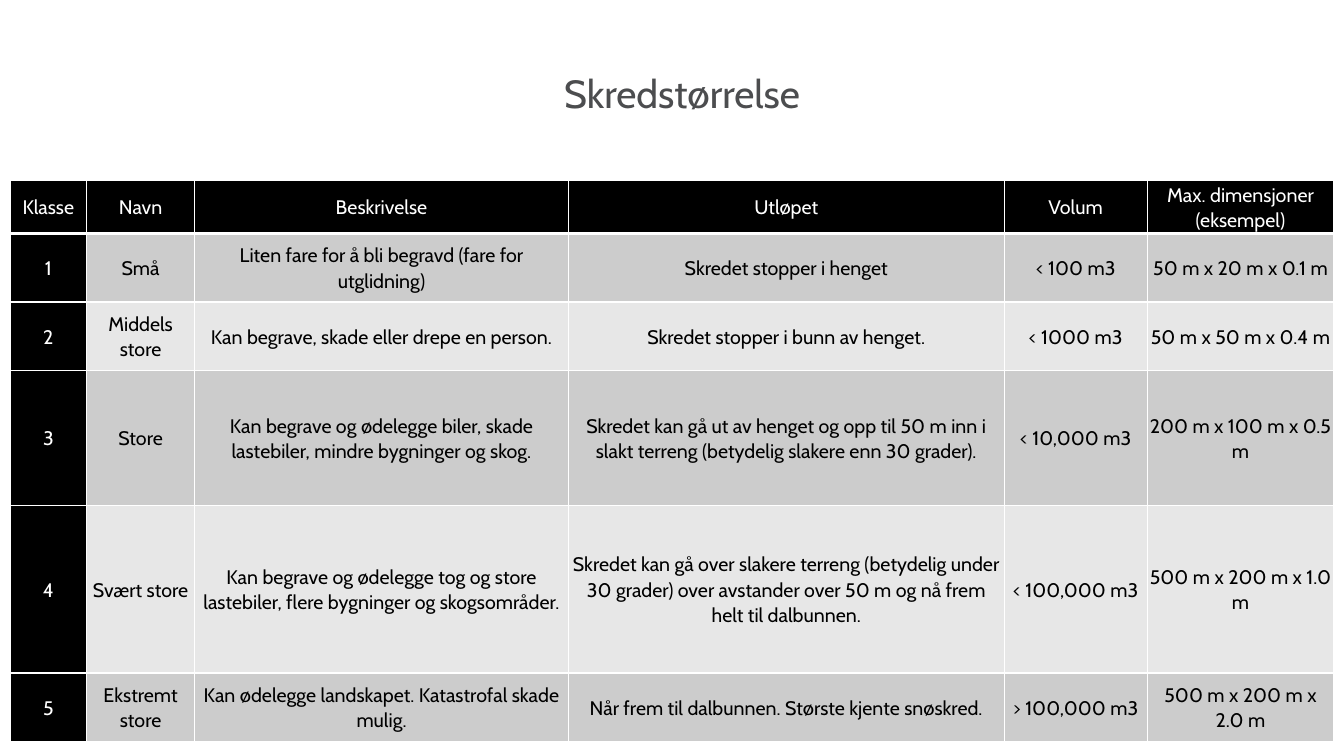
from dataclasses import astuple, dataclass

from lxml.etree import SubElement
from pptx import Presentation
from pptx.dml.color import RGBColor
from pptx.enum.text import MSO_ANCHOR as Anchor, PP_ALIGN as Align
from pptx.oxml.ns import qn
from pptx.slide import Slide
from pptx.table import _Cell as Cell
from pptx.text.text import TextFrame
from pptx.util import Inches, Pt

FONT = "Cabin"
COLORS = {
    "title": "4C4D4F",
    "header": "000000",
    "header_text": "FFFFFF",
    "odd_row": "CCCCCC",
    "even_row": "E7E7E7",
    "body_text": "000000",
    "border": "FFFFFF",
}
COL_WIDTHS = (0.76, 1.07, 3.71, 4.32, 1.42, 1.85)


@dataclass
class SizeClass:
    number: str
    name: str
    description: str
    runout: str
    volume: str
    dimensions: str
    height: float = 0.68


ROWS = [
    SizeClass("Klasse", "Navn", "Beskrivelse", "Utløpet", "Volum",
              "Max. dimensjoner (eksempel)", 0.35),
    SizeClass("1", "Små", "Liten fare for å bli begravd (fare for utglidning)",
              "Skredet stopper i henget", "< 100 m3", "50 m x 20 m x 0.1 m"),
    SizeClass("2", "Middels store", "Kan begrave, skade eller drepe en person.",
              "Skredet stopper i bunn av henget.", "< 1000 m3", "50 m x 50 m x 0.4 m"),
    SizeClass("3", "Store",
              "Kan begrave og ødelegge biler, skade lastebiler, mindre bygninger og skog.",
              "Skredet kan gå ut av henget og opp til 50 m inn i slakt terreng "
              "(betydelig slakere enn 30 grader).",
              "< 10,000 m3", "200 m x 100 m x 0.5 m", 1.34),
    SizeClass("4", "Svært store",
              "Kan begrave og ødelegge tog og store lastebiler, flere bygninger og skogsområder.",
              "Skredet kan gå over slakere terreng (betydelig under 30 grader) over "
              "avstander over 50 m og nå frem helt til dalbunnen.",
              "< 100,000 m3", "500 m x 200 m x 1.0 m", 1.66),
    SizeClass("5", "Ekstremt store", "Kan ødelegge landskapet. Katastrofal skade mulig.",
              "Når frem til dalbunnen. Største kjente snøskred.",
              "> 100,000 m3", "500 m x 200 m x 2.0 m"),
]


def set_text(tf: TextFrame, text: str, size: float, color: str) -> None:
    tf.text = text
    p = tf.paragraphs[0]
    p.alignment = Align.CENTER
    font = p.runs[0].font
    font.name, font.size, font.bold = FONT, Pt(size), False
    font.color.rgb = RGBColor.from_string(COLORS[color])


def set_borders(cell: Cell, bottom: float) -> None:
    tc_pr = cell._tc.get_or_add_tcPr()
    for side, width in (("L", 1), ("R", 1), ("T", 1), ("B", bottom)):
        ln = SubElement(tc_pr, qn(f"a:ln{side}"), w=str(Pt(width)))
        fill = SubElement(ln, qn("a:solidFill"))
        SubElement(fill, qn("a:srgbClr"), val=COLORS["border"])


def format_cell(cell: Cell, text: str, row: int, col: int) -> None:
    is_header = row == 0 or col == 0
    set_text(cell.text_frame, text, 14, "header_text" if is_header else "body_text")
    p = cell.text_frame.paragraphs[0]
    p.line_spacing, p.space_after = 1.07, Pt(8)
    cell.vertical_anchor = Anchor.MIDDLE
    cell.margin_left = cell.margin_right = Inches(0.01)
    cell.margin_top = cell.margin_bottom = Inches(0.01)
    set_borders(cell, bottom=3 if row == 0 else 1)
    fill = "header" if is_header else "odd_row" if row % 2 else "even_row"
    cell.fill.solid()
    cell.fill.fore_color.rgb = RGBColor.from_string(COLORS[fill])


def add_title(s: Slide, text: str) -> None:
    title = s.shapes.title
    title.left, title.top = Inches(1.13), Inches(0.64)
    title.width, title.height = Inches(11.27), Inches(0.9)
    set_text(title.text_frame, text, 28, "title")
    title.text_frame.vertical_anchor = Anchor.TOP


def add_size_table(s: Slide) -> None:
    height = sum(row.height for row in ROWS)
    table = s.shapes.add_table(len(ROWS), len(COL_WIDTHS), Inches(0.1), Inches(1.79),
                               Inches(sum(COL_WIDTHS)), Inches(height)).table
    for column, width in zip(table.columns, COL_WIDTHS):
        column.width = Inches(width)
    for r, size_class in enumerate(ROWS):
        *texts, row_height = astuple(size_class)
        table.rows[r].height = Inches(row_height)
        for c, text in enumerate(texts):
            format_cell(table.cell(r, c), text, r, c)


def main() -> None:
    prs = Presentation()
    prs.slide_width, prs.slide_height = Inches(13.33), Inches(7.5)
    s = prs.slides.add_slide(prs.slide_layouts[5])
    add_title(s, "Skredstørrelse")
    add_size_table(s)
    prs.save("out.pptx")


if __name__ == "__main__":
    main()
